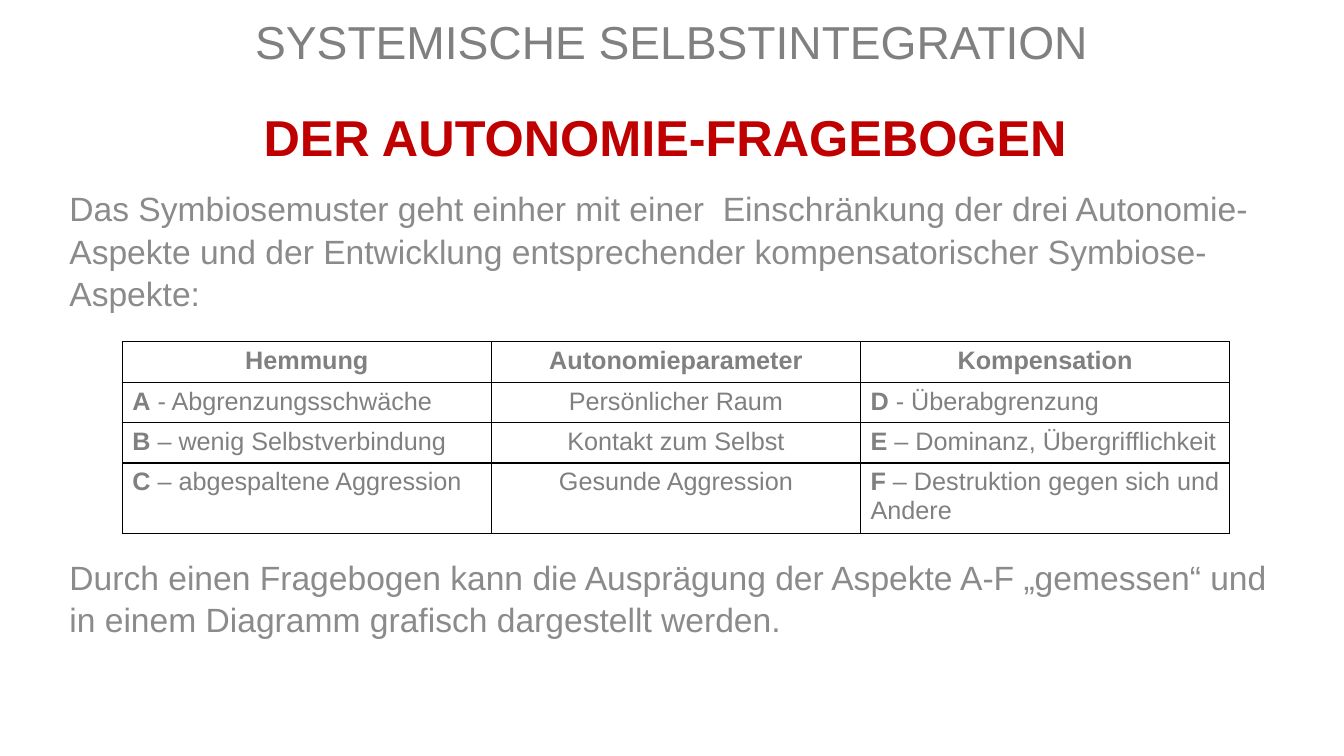
from dataclasses import dataclass

from lxml.etree import SubElement
from pptx import Presentation
from pptx.dml.color import RGBColor
from pptx.enum.text import MSO_ANCHOR as Anchor, PP_ALIGN as Align
from pptx.oxml.ns import qn
from pptx.slide import Slide
from pptx.table import _Cell as Cell
from pptx.text.text import _Paragraph as Paragraph
from pptx.util import Pt

COLORS = {"grey": "808080", "body": "8B8B8B", "red": "C00000", "border": "000000"}
FONT = "Arial"
COLUMN_WIDTH = 263.7
ROW_HEIGHTS = [28.9, 28.9, 28.9, 50.3]


@dataclass
class TextBlock:
    """A text box with its place in points and its format."""
    left: float
    top: float
    width: float
    height: float
    texts: list[str]
    size: float
    color: str
    bold: bool = False
    align: Align = Align.CENTER
    anchor: Anchor = Anchor.TOP
    line_spacing: float = 1.05
    gap: float = 0


@dataclass
class Aspect:
    """A table row: inhibition, autonomy parameter and compensation."""
    inhibition: tuple[str, str]
    parameter: str
    compensation: tuple[str, str]


BLOCKS = [
    TextBlock(120, 11.5, 720, 41, ["SYSTEMISCHE SELBSTINTEGRATION"], 33, "grey",
              anchor=Anchor.BOTTOM, line_spacing=1),
    TextBlock(42.5, 69.8, 875.5, 91.4, ["DER AUTONOMIE-FRAGEBOGEN "], 36, "red", bold=True),
    TextBlock(42.5, 129.6, 875.5, 332, [
        "Das Symbiosemuster geht einher mit einer  Einschränkung der drei Autonomie-Aspekte "
        "und der Entwicklung entsprechender kompensatorischer Symbiose-Aspekte:",
        "Durch einen Fragebogen kann die Ausprägung der Aspekte A-F „gemessen“ und "
        "in einem Diagramm grafisch dargestellt werden.",
    ], 24, "body", align=Align.LEFT, gap=172.5),
]
HEADERS = ["Hemmung", "Autonomieparameter", "Kompensation"]
ASPECTS = [
    Aspect(("A", " - Abgrenzungsschwäche"), "Persönlicher Raum", ("D", " - Überabgrenzung")),
    Aspect(("B", " – wenig Selbstverbindung"), "Kontakt zum Selbst",
           ("E", " – Dominanz, Übergrifflichkeit")),
    Aspect(("C", " – abgespaltene Aggression"), "Gesunde Aggression",
           ("F", " – Destruktion gegen sich und Andere")),
]


def add_text(paragraph: Paragraph, text: str, *, size: float, color: str,
             bold: bool = False) -> None:
    """Append a formatted run to a paragraph."""
    run = paragraph.add_run()
    run.text = text
    run.font.name = FONT
    run.font.size = Pt(size)
    run.font.bold = bold
    run.font.color.rgb = RGBColor.from_string(COLORS[color])


def draw_block(slide: Slide, block: TextBlock) -> None:
    """Draw a text block on the slide."""
    shape = slide.shapes.add_textbox(
        Pt(block.left), Pt(block.top), Pt(block.width), Pt(block.height))
    frame = shape.text_frame
    frame.word_wrap = True
    frame.vertical_anchor = block.anchor
    for index, text in enumerate(block.texts):
        paragraph = frame.add_paragraph() if index else frame.paragraphs[0]
        paragraph.alignment = block.align
        paragraph.line_spacing = block.line_spacing
        paragraph.space_before = Pt(block.gap if index else 0)
        add_text(paragraph, text, size=block.size, color=block.color, bold=block.bold)


def add_borders(cell: Cell) -> None:
    """Give a cell thin lines on all four sides and no fill."""
    properties = cell._tc.get_or_add_tcPr()
    for side in ("a:lnL", "a:lnR", "a:lnT", "a:lnB"):
        line = SubElement(properties, qn(side), w=str(Pt(1)))
        fill = SubElement(line, qn("a:solidFill"))
        SubElement(fill, qn("a:srgbClr"), val=COLORS["border"])
    cell.fill.background()


def fill_cell(cell: Cell, parts: list[tuple[str, bool]], align: Align) -> None:
    """Write text parts, each with its boldness, into a bordered cell."""
    add_borders(cell)
    paragraph = cell.text_frame.paragraphs[0]
    paragraph.alignment = align
    for text, bold in parts:
        add_text(paragraph, text, size=18, color="grey", bold=bold)


def draw_table(slide: Slide) -> None:
    """Draw the table of autonomy aspects."""
    table = slide.shapes.add_table(
        len(ROW_HEIGHTS), len(HEADERS), Pt(87.3), Pt(244.1),
        Pt(COLUMN_WIDTH * len(HEADERS)), Pt(sum(ROW_HEIGHTS))).table
    for column in table.columns:
        column.width = Pt(COLUMN_WIDTH)
    for row, height in zip(table.rows, ROW_HEIGHTS):
        row.height = Pt(height)
    for index, header in enumerate(HEADERS):
        fill_cell(table.cell(0, index), [(header, True)], Align.CENTER)
    for index, aspect in enumerate(ASPECTS, start=1):
        fill_cell(table.cell(index, 1), [(aspect.parameter, False)], Align.CENTER)
        for column, (letter, label) in ((0, aspect.inhibition), (2, aspect.compensation)):
            fill_cell(table.cell(index, column), [(letter, True), (label, False)], Align.LEFT)


def main() -> None:
    """Build and save the slide."""
    presentation = Presentation()
    presentation.slide_width = Pt(960)
    presentation.slide_height = Pt(540)
    slide = presentation.slides.add_slide(presentation.slide_layouts[6])
    for block in BLOCKS:
        draw_block(slide, block)
    draw_table(slide)
    presentation.save("out.pptx")


if __name__ == "__main__":
    main()
